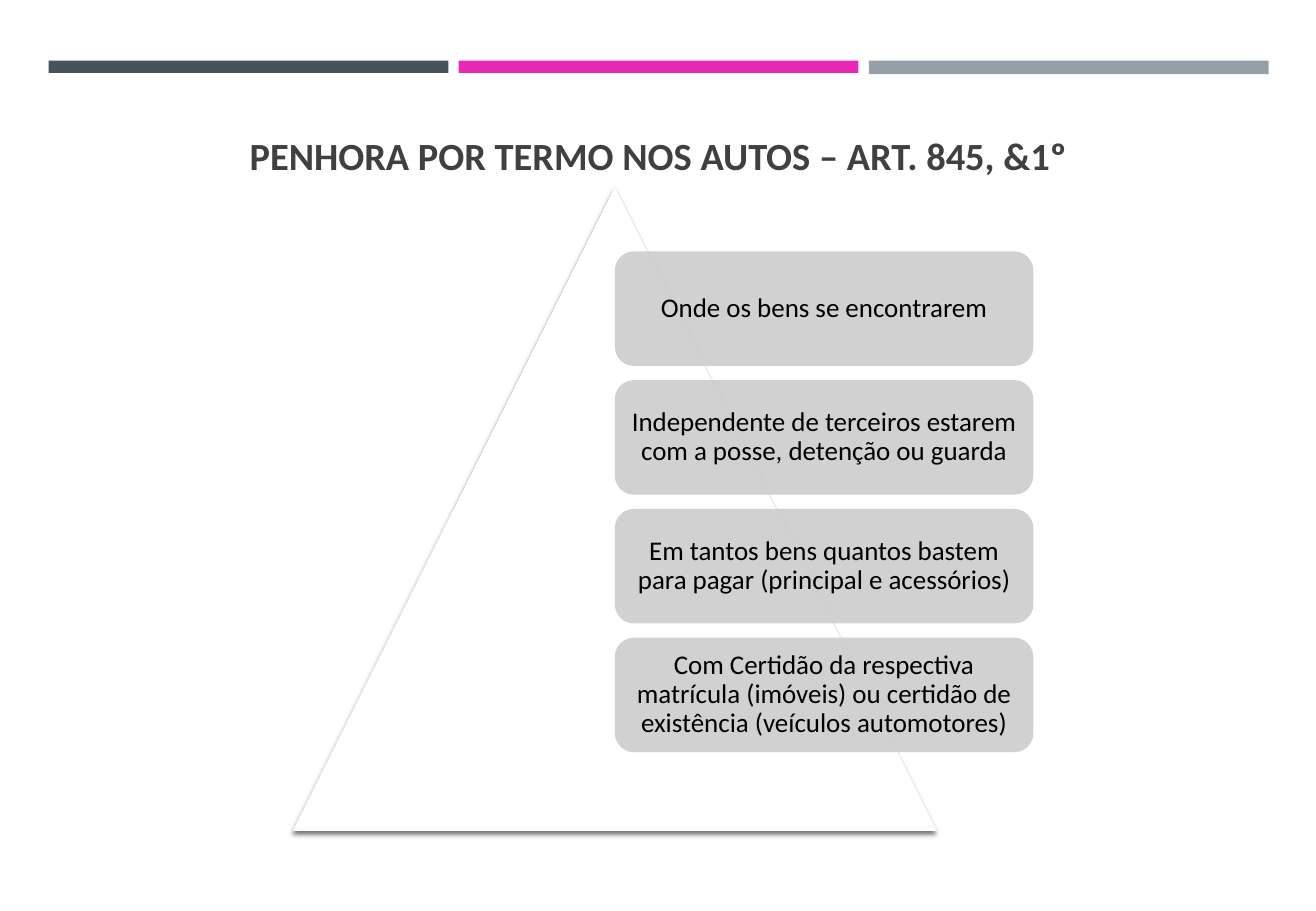
from lxml.etree import SubElement
from pptx import Presentation
from pptx.dml.color import RGBColor
from pptx.enum.shapes import MSO_SHAPE
from pptx.enum.text import MSO_ANCHOR, PP_ALIGN
from pptx.oxml.ns import qn
from pptx.util import Inches, Pt

SLATE = RGBColor(0x46, 0x53, 0x59)
MAGENTA = RGBColor(0xE7, 0x29, 0xB4)
STEEL = RGBColor(0x96, 0x9F, 0xA7)
SILVER = RGBColor(0xCC, 0xCC, 0xCC)
CHARCOAL = RGBColor(0x40, 0x40, 0x40)
WHITE = RGBColor(0xFF, 0xFF, 0xFF)
BLACK = RGBColor(0, 0, 0)

TITLE = "PENHORA POR TERMO NOS AUTOS – ART. 845, &1º"
CONDITIONS = [
    "Onde os bens se encontrarem",
    "Independente de terceiros estarem com a posse, detenção ou guarda",
    "Em tantos bens quantos bastem para pagar (principal e acessórios)",
    "Com Certidão da respectiva matrícula (imóveis) ou certidão de existência (veículos automotores)",
]
BANDS = [(SLATE, 0.1), (MAGENTA, 0.1), (STEEL, 0.11)]  # colour, height

SLIDE_WIDTH, SLIDE_HEIGHT = 10.83, 7.5
BAND_LEFT, BAND_TOP, BAND_WIDTH, BAND_PITCH = 0.4, 0.5, 3.29, 3.375
TRIANGLE_LEFT, TRIANGLE_TOP, TRIANGLE_SIDE = 2.41, 1.54, 5.3
CARD_WIDTH = TRIANGLE_SIDE * 0.65
CARD_HEIGHT = TRIANGLE_SIDE * 0.178
CARD_PITCH = TRIANGLE_SIDE * 0.2
CARD_LEFT = TRIANGLE_LEFT + TRIANGLE_SIDE / 2
CARD_TOP = TRIANGLE_TOP + TRIANGLE_SIDE / 10


def add_plain_shape(slide, kind, left, top, width, height, colour):
    """Add a filled shape with neither outline nor shadow."""
    shape = slide.shapes.add_shape(
        kind, Inches(left), Inches(top), Inches(width), Inches(height))
    shape.shadow.inherit = False
    shape.fill.solid()
    shape.fill.fore_color.rgb = colour
    shape.line.fill.background()
    return shape


def write_text(shape, text, size, colour, anchor, bold=False):
    frame = shape.text_frame
    frame.text = text
    frame.word_wrap = True
    frame.vertical_anchor = anchor
    paragraph = frame.paragraphs[0]
    paragraph.alignment = PP_ALIGN.CENTER
    paragraph.line_spacing = 0.9
    font = paragraph.runs[0].font
    font.name, font.size, font.bold = "Calibri", Pt(size), bold
    font.color.rgb = colour


def set_alpha(colour_element, percent):
    SubElement(colour_element, qn("a:alpha"), val=str(percent * 1000))


def add_shadow_below(shape):
    effects = shape._element.spPr.find(qn("a:effectLst"))
    shadow = SubElement(effects, qn("a:outerShdw"), blurRad=str(Pt(3)),
                        dist=str(Pt(2)), dir="5400000", rotWithShape="0")
    set_alpha(SubElement(shadow, qn("a:srgbClr"), val=str(BLACK)), 55)


def main():
    prs = Presentation()
    prs.slide_width, prs.slide_height = Inches(SLIDE_WIDTH), Inches(SLIDE_HEIGHT)
    slide = prs.slides.add_slide(prs.slide_layouts[6])

    for column, (colour, height) in enumerate(BANDS):
        add_plain_shape(slide, MSO_SHAPE.RECTANGLE, BAND_LEFT + column * BAND_PITCH,
                        BAND_TOP, BAND_WIDTH, height, colour)

    title = slide.shapes.add_textbox(
        Inches(0.52), Inches(0.8), Inches(9.8), Inches(1.08))
    write_text(title, TITLE, 22.8, CHARCOAL, MSO_ANCHOR.BOTTOM, bold=True)
    title.text_frame.margin_bottom = Inches(0.41)

    triangle = add_plain_shape(slide, MSO_SHAPE.ISOSCELES_TRIANGLE, TRIANGLE_LEFT,
                               TRIANGLE_TOP, TRIANGLE_SIDE, TRIANGLE_SIDE, WHITE)
    add_shadow_below(triangle)

    for row, condition in enumerate(CONDITIONS):
        card = add_plain_shape(slide, MSO_SHAPE.ROUNDED_RECTANGLE, CARD_LEFT,
                               CARD_TOP + row * CARD_PITCH, CARD_WIDTH, CARD_HEIGHT, SILVER)
        set_alpha(card._element.spPr.find(qn("a:solidFill"))[0], 90)
        write_text(card, condition, 16, BLACK, MSO_ANCHOR.MIDDLE)
        frame = card.text_frame
        frame.margin_left = frame.margin_right = Inches(0.07)
        frame.margin_top = frame.margin_bottom = Inches(0.07)

    prs.save("out.pptx")


if __name__ == "__main__":
    main()
